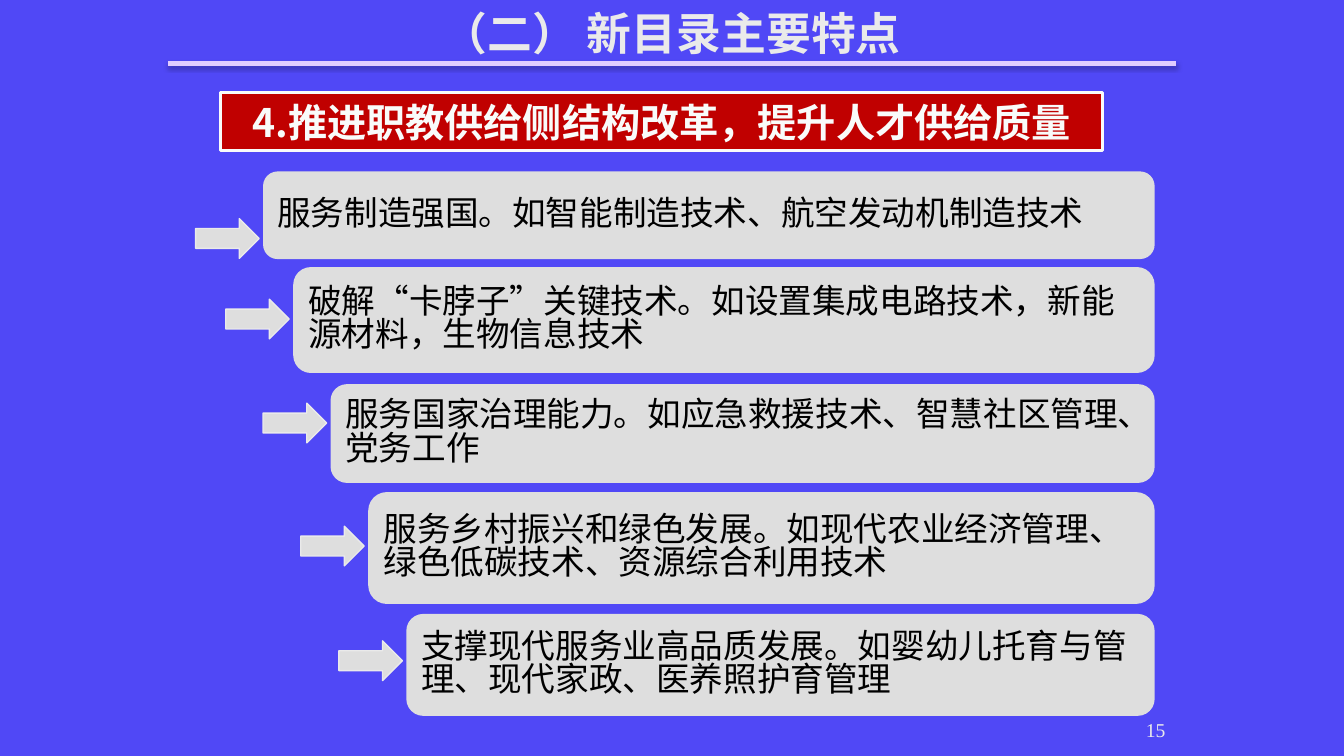
from lxml import etree
from pptx import Presentation
from pptx.dml.color import RGBColor
from pptx.enum.shapes import MSO_CONNECTOR, MSO_SHAPE
from pptx.enum.text import MSO_ANCHOR, PP_ALIGN
from pptx.oxml.ns import qn
from pptx.util import Cm, Pt

SANS = "Noto Sans CJK SC"
BACKGROUND, PANEL, PALE, WHITE = "5048F6", "DEDEDE", "EAEAEA", "F9FBFA"
RIGHT_EDGE = 29.1
ARROW_STEP, ARROW_W, ARROW_H = 1.7, 1.6, 1.0

# left, top, height of the panel, top of its arrow, text
POINTS = [
    (6.63, 4.32, 2.21, 5.51, "服务制造强国。如智能制造技术、航空发动机制造技术"),
    (7.39, 6.73, 2.67, 7.54, "破解“卡脖子”关键技术。如设置集成电路技术，新能源材料，生物信息技术"),
    (8.33, 9.68, 2.49, 10.16, "服务国家治理能力。如应急救援技术、智慧社区管理、党务工作"),
    (9.28, 12.4, 2.82, 13.26, "服务乡村振兴和绿色发展。如现代农业经济管理、绿色低碳技术、资源综合利用技术"),
    (10.24, 15.47, 2.57, 16.15, "支撑现代服务业高品质发展。如婴幼儿托育与管理、现代家政、医养照护育管理"),
]


def color(value):
    return RGBColor.from_string(value)


def write(sp, text, size=24, font=SANS, ink="000000", bold=False,
          align=PP_ALIGN.LEFT, anchor=MSO_ANCHOR.MIDDLE, spacing=None):
    tf = sp.text_frame
    tf.word_wrap = True
    tf.vertical_anchor = anchor
    p = tf.paragraphs[0]
    p.alignment = align
    p.line_spacing = spacing
    r = p.add_run()
    r.text = text
    r.font.size, r.font.name, r.font.bold = Pt(size), font, bold
    r.font.color.rgb = color(ink)
    # East Asian glyphs take their own font setting
    ea = etree.Element(qn("a:ea"), typeface=font)
    r.font._element.find(qn("a:latin")).addnext(ea)


def add_text(slide, left, top, width, height, text, **fmt):
    sp = slide.shapes.add_textbox(Cm(left), Cm(top), Cm(width), Cm(height))
    write(sp, text, **fmt)


def add_box(slide, kind, left, top, width, height, fill, line=None, line_width=1):
    sp = slide.shapes.add_shape(kind, Cm(left), Cm(top), Cm(width), Cm(height))
    sp.shadow.inherit = False
    sp.fill.solid()
    sp.fill.fore_color.rgb = color(fill)
    if line:
        sp.line.color.rgb = color(line)
        sp.line.width = Pt(line_width)
    else:
        sp.line.fill.background()
    return sp


def add_rule(slide, left, right, y, ink, width):
    line = slide.shapes.add_connector(
        MSO_CONNECTOR.STRAIGHT, Cm(left), Cm(y), Cm(right), Cm(y))
    line.line.color.rgb = color(ink)
    line.line.width = Pt(width)
    # Soft shadow below the rule
    effects = etree.SubElement(line._element.spPr, qn("a:effectLst"))
    shadow = etree.SubElement(effects, qn("a:outerShdw"), blurRad=str(Pt(3.1)),
                              dist=str(Pt(1.8)), dir="5400000", rotWithShape="0")
    black = etree.SubElement(shadow, qn("a:srgbClr"), val="000000")
    etree.SubElement(black, qn("a:alpha"), val="35000")


def add_point(slide, left, top, height, arrow_top, text):
    panel = add_box(slide, MSO_SHAPE.ROUNDED_RECTANGLE, left, top,
                    RIGHT_EDGE - left, height, PANEL)
    write(panel, text, spacing=0.83)
    add_box(slide, MSO_SHAPE.RIGHT_ARROW, left - ARROW_STEP, arrow_top,
            ARROW_W, ARROW_H, PANEL, PALE)


def main():
    prs = Presentation()
    prs.slide_width, prs.slide_height = Cm(33.87), Cm(19.05)
    slide = prs.slides.add_slide(prs.slide_layouts[6])
    slide.background.fill.solid()
    slide.background.fill.fore_color.rgb = color(BACKGROUND)

    # Title and rule
    add_text(slide, 4.23, -0.46, 25.4, 2.54, "（二） 新目录主要特点",
             size=32, ink=PALE, bold=True, align=PP_ALIGN.CENTER)
    add_rule(slide, 4.23, 29.63, 1.6, "E0CCFF", 3)

    # Red banner
    banner = add_box(slide, MSO_SHAPE.RECTANGLE, 5.56, 2.34, 22.23, 1.45,
                     "C00000", WHITE, 2)
    write(banner, "4.推进职教供给侧结构改革，提升人才供给质量",
          size=28, ink=WHITE, bold=True, align=PP_ALIGN.CENTER)

    # Page number
    add_text(slide, 24.33, 17.53, 5.29, 1.27, "15", size=14,
             font="Times New Roman", ink=PALE, align=PP_ALIGN.RIGHT,
             anchor=MSO_ANCHOR.BOTTOM)

    # Stepped points
    for point in POINTS:
        add_point(slide, *point)

    prs.save("out.pptx")


if __name__ == "__main__":
    main()
